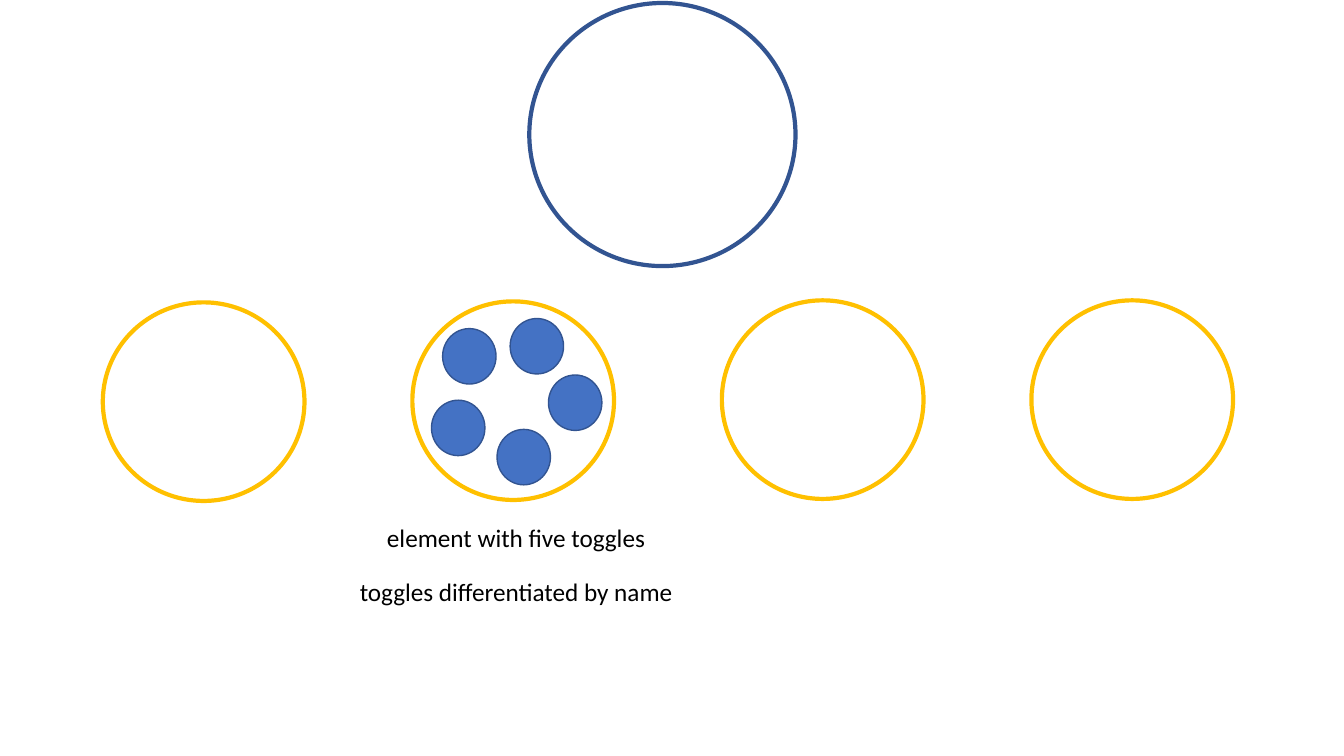
from pptx import Presentation
from pptx.dml.color import RGBColor
from pptx.enum.shapes import MSO_SHAPE
from pptx.enum.text import MSO_AUTO_SIZE
from pptx.util import Emu, Pt

EMU_PER_PX = 9144
NAVY = RGBColor(0x32, 0x54, 0x91)
BLUE = RGBColor(0x44, 0x72, 0xC4)
GOLD = RGBColor(0xFF, 0xC0, 0x00)
BLACK = RGBColor(0x00, 0x00, 0x00)


def px(n):
    return Emu(n * EMU_PER_PX)


class SlideBuilder:
    font = "Calibri"
    text_size = Pt(18)

    def __init__(self, prs):
        self.s = prs.slides.add_slide(prs.slide_layouts[6])

    def ellipse(self, x, y, w, h, line, weight, fill=None):
        sp = self.s.shapes.add_shape(MSO_SHAPE.OVAL, px(x), px(y), px(w), px(h))
        sp.shadow.inherit = False
        if fill is None:
            sp.fill.background()
        else:
            sp.fill.solid()
            sp.fill.fore_color.rgb = fill
        sp.line.color.rgb = line
        sp.line.width = Pt(weight)

    def label(self, x, y, w, h, text):
        tf = self.s.shapes.add_textbox(px(x), px(y), px(w), px(h)).text_frame
        tf.word_wrap = False
        tf.auto_size = MSO_AUTO_SIZE.SHAPE_TO_FIT_TEXT
        r = tf.paragraphs[0].add_run()
        r.text = text
        r.font.name = self.font
        r.font.size = self.text_size
        r.font.color.rgb = BLACK


def main():
    prs = Presentation()
    prs.slide_width, prs.slide_height = px(1333), px(750)
    b = SlideBuilder(prs)

    b.ellipse(525, 3, 264, 261, NAVY, 3)
    for i, y in enumerate((300, 299, 298, 298)):
        b.ellipse(102 + 307 * i, y, 200, 197, GOLD, 3)
    for x, y in ((439, 326), (428, 397), (506, 316), (544, 372), (493, 426)):
        b.ellipse(x, y, 53, 55, NAVY, 1, BLUE)

    b.label(374, 513, 280, 40, "element with five toggles")
    b.label(347, 567, 335, 40, "toggles differentiated by name")

    prs.save("out.pptx")


if __name__ == "__main__":
    main()
